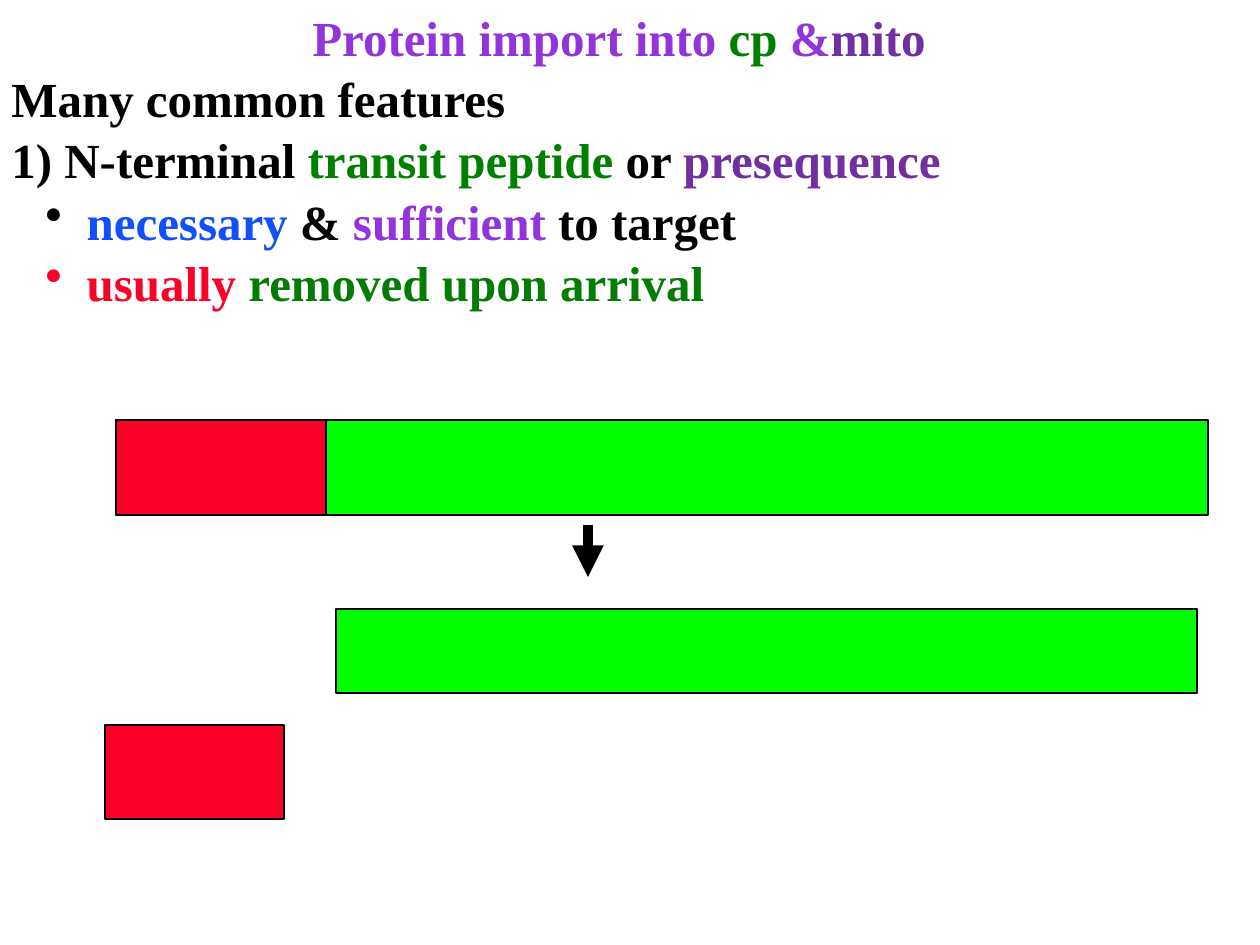
from pptx import Presentation
from pptx.dml.color import RGBColor
from pptx.enum.shapes import MSO_CONNECTOR, MSO_SHAPE
from pptx.enum.text import MSO_AUTO_SIZE, PP_ALIGN
from pptx.oxml.ns import qn
from pptx.util import Pt
from lxml import etree

RECTANGLE = MSO_SHAPE.RECTANGLE
STRAIGHT = MSO_CONNECTOR.STRAIGHT
CENTER = PP_ALIGN.CENTER
LEFT = PP_ALIGN.LEFT
GROW = MSO_AUTO_SIZE.SHAPE_TO_FIT_TEXT
EMU_PER_PX = 914400 / 126
FONT = "Times New Roman"
COLORS = {
    "black": "000000",
    "violet": "9234DB",
    "purple": "7030A0",
    "green": "008000",
    "leaf": "037C03",
    "blue": "114FFB",
    "red": "FC0128",
    "lime": "00FF00",
}
TITLE = [("Protein import into ", "violet"), ("cp ", "green"), ("&", "violet"), ("mito", "purple")]
FEATURES = [
    ([("Many common features", "black")], False),
    ([("1) N-terminal ", "black"), ("transit peptide ", "green"),
      ("or ", "black"), ("presequence", "purple")], False),
    ([(" ", "black"), ("necessary", "blue"), (" & ", "black"),
      ("sufficient ", "violet"), ("to target", "black")], True),
    ([(" usually", "red"), (" removed upon arrival", "leaf")], True),
]
PROTEIN_PARTS = [
    (116, 420, 1092, 95, "lime"),
    (116, 420, 210, 95, "red"),
    (336, 609, 861, 84, "lime"),
    (105, 725, 179, 94, "red"),
]


def px(length):
    return round(length * EMU_PER_PX)


def rgb(name):
    return RGBColor.from_string(COLORS[name])


class SlideBuilder:
    """Draws styled elements on the current slide."""

    def __init__(self, slide):
        self.slide = slide

    def text_box(self, left, top, width, height):
        shape = self.slide.shapes.add_textbox(px(left), px(top), px(width), px(height))
        frame = shape.text_frame
        frame.word_wrap = True
        frame.auto_size = GROW
        return frame

    def fill_paragraph(self, paragraph, parts, alignment=LEFT, bullet=False):
        paragraph.alignment = alignment
        paragraph.line_spacing = 1.04
        paragraph.font.name = FONT
        paragraph.font.size = Pt(28)
        paragraph.font.bold = True
        for text, color in parts:
            run = paragraph.add_run()
            run.text = text
            run.font.color.rgb = rgb(color)
        if bullet:
            paragraph.level = 1
            properties = paragraph._p.get_or_add_pPr()
            properties.set("marL", str(px(63)))
            properties.set("indent", str(px(-29)))
            character = etree.Element(qn("a:buChar"), char="•")
            properties.find(qn("a:defRPr")).addprevious(character)

    def bar(self, left, top, width, height, color):
        shape = self.slide.shapes.add_shape(RECTANGLE, px(left), px(top), px(width), px(height))
        shape.shadow.inherit = False
        shape.fill.solid()
        shape.fill.fore_color.rgb = rgb(color)
        shape.line.color.rgb = rgb("black")
        shape.line.width = Pt(1)

    def arrow(self, x1, y1, x2, y2):
        connector = self.slide.shapes.add_connector(STRAIGHT, px(x1), px(y1), px(x2), px(y2))
        connector.line.color.rgb = rgb("black")
        connector.line.width = Pt(6)
        etree.SubElement(connector.line._get_or_add_ln(), qn("a:tailEnd"), type="triangle")
        etree.SubElement(connector._element.spPr, qn("a:effectLst"))


def main():
    presentation = Presentation()
    presentation.slide_width = px(1260)
    presentation.slide_height = px(945)
    builder = SlideBuilder(presentation.slides.add_slide(presentation.slide_layouts[6]))

    frame = builder.text_box(-1, -1, 1240, 306)
    builder.fill_paragraph(frame.paragraphs[0], TITLE, CENTER)
    for parts, bullet in FEATURES:
        builder.fill_paragraph(frame.add_paragraph(), parts, bullet=bullet)

    for part in PROTEIN_PARTS:
        builder.bar(*part)
    builder.arrow(588, 525, 588, 577)

    presentation.save("out.pptx")


if __name__ == "__main__":
    main()
